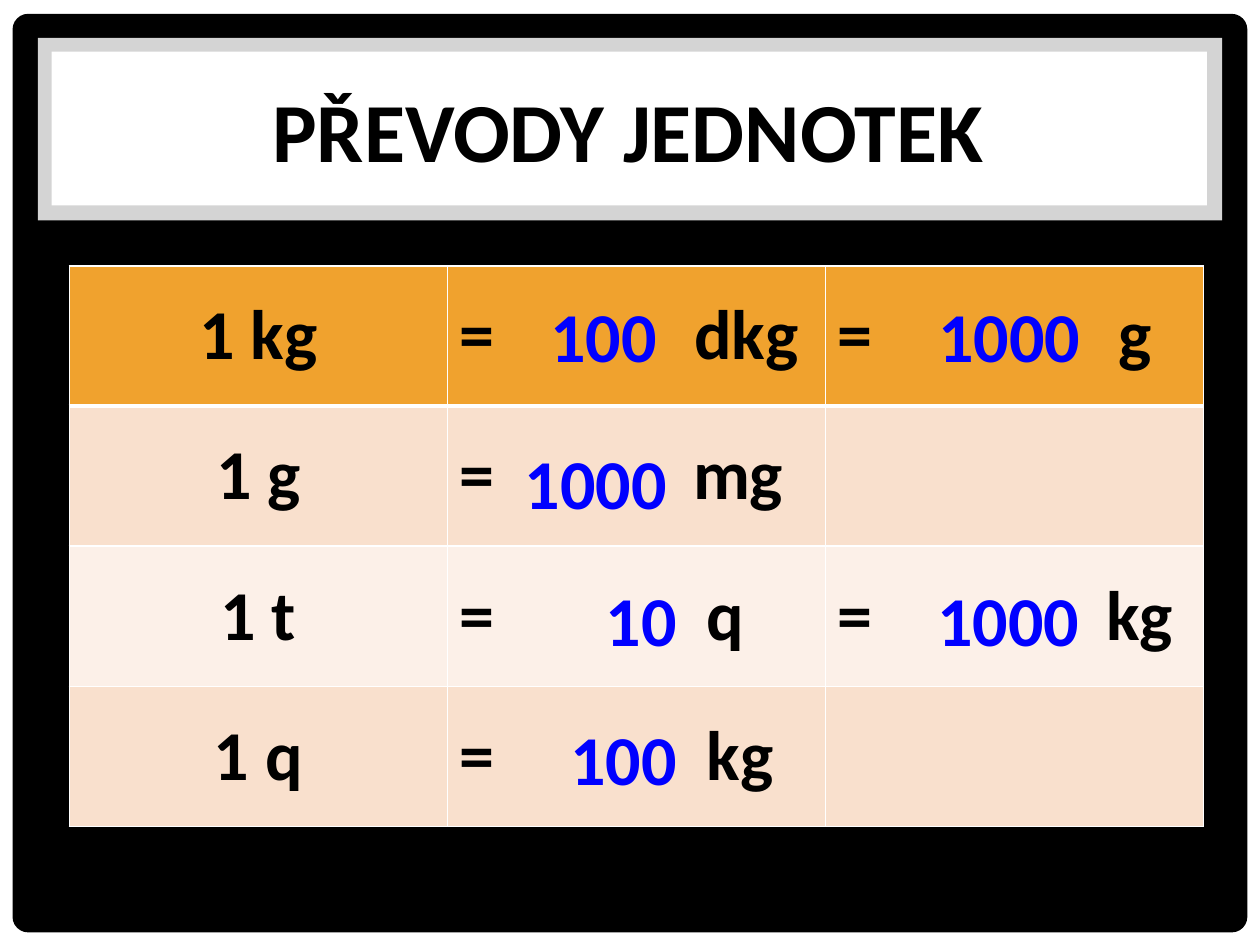
import pptx
import pptx.util
import pptx.dml.color
import pptx.enum.shapes
import pptx.enum.text
import pptx.oxml
import pptx.oxml.ns

Inches = pptx.util.Inches
Pt = pptx.util.Pt
ALIGN = pptx.enum.text.PP_ALIGN
ANCHOR = pptx.enum.text.MSO_ANCHOR
AUTO_SIZE = pptx.enum.text.MSO_AUTO_SIZE
SHAPE = pptx.enum.shapes.MSO_SHAPE
qn = pptx.oxml.ns.qn

BLACK, WHITE, BLUE = "000000", "FFFFFF", "0000FF"
ROW_FILLS = ["F0A22E", "F9E0CD", "FCF0E8", "F9E0CD"]
ROWS = [
    ["1 kg", ("dkg", 1.86), ("g", 2.23)],
    ["1 g", ("mg", 1.85), None],
    ["1 t", ("q", 1.96), ("kg", 2.13)],
    ["1 q", ("kg", 1.96), None],
]
ANSWERS = [
    ("100", 3.98, 2.27, 1.33, ALIGN.RIGHT),
    ("1000", 4.06, 3.44, 1.33, ALIGN.RIGHT),
    ("10", 4.22, 4.53, 1.25, ALIGN.RIGHT),
    ("100", 4.06, 5.63, 1.41, ALIGN.RIGHT),
    ("1000", 6.95, 2.27, 1.72, ALIGN.RIGHT),
    ("1000", 7.34, 4.53, 1.41, ALIGN.LEFT),
]


def color(value):
    return pptx.dml.color.RGBColor.from_string(value)


def set_fill(target, value):
    target.fill.solid()
    target.fill.fore_color.rgb = color(value)


def add_run(p, text, size, value):
    r = p.add_run()
    r.text = text
    r.font.name = "Calibri"
    r.font.size = Pt(size)
    r.font.bold = True
    r.font.color.rgb = color(value)


def add_panel(s, kind, x, y, w, h, value, alpha=None):
    sp = s.shapes.add_shape(kind, Inches(x), Inches(y), Inches(w), Inches(h))
    sp.shadow.inherit = False
    set_fill(sp, value)
    sp.line.fill.background()
    if alpha:
        srgb = sp._element.spPr.find(".//" + qn("a:srgbClr"))
        pptx.oxml.ns.qn("a:alpha")
        srgb.append(pptx.oxml.parse_xml(
            f'<a:alpha {pptx.oxml.ns.nsdecls("a")} val="{alpha * 1000}"/>'))
    return sp


def add_title(s, text):
    sp = s.shapes.title
    s.shapes._spTree.append(sp._element)
    sp.left, sp.top = Inches(0.47), Inches(0.45)
    sp.width, sp.height = Inches(9.03), Inches(1.14)
    tf = sp.text_frame
    tf.auto_size = AUTO_SIZE.NONE
    tf.word_wrap = True
    tf.vertical_anchor = ANCHOR.MIDDLE
    p = tf.paragraphs[0]
    p.alignment = ALIGN.CENTER
    add_run(p, text, 48, BLACK)


def add_tab_stop(p, position):
    p._p.get_or_add_pPr().append(pptx.oxml.parse_xml(
        f'<a:tabLst {pptx.oxml.ns.nsdecls("a")}>'
        f'<a:tab pos="{Inches(position)}" algn="l"/></a:tabLst>'))


def set_borders(cell, top, bottom):
    tcPr = cell._tc.get_or_add_tcPr()
    for side, width in (("L", 1), ("R", 1), ("T", top), ("B", bottom)):
        tcPr.append(pptx.oxml.parse_xml(
            f'<a:ln{side} {pptx.oxml.ns.nsdecls("a")} w="{Pt(width)}">'
            f'<a:solidFill><a:srgbClr val="{WHITE}"/></a:solidFill></a:ln{side}>'))


def fill_cell(cell, content):
    cell.vertical_anchor = ANCHOR.MIDDLE
    p = cell.text_frame.paragraphs[0]
    if isinstance(content, str):
        p.alignment = ALIGN.CENTER
        add_run(p, content, 40, BLACK)
    elif content:
        unit, position = content
        add_tab_stop(p, position)
        add_run(p, "=\t" + unit, 40, BLACK)


def add_units_table(s):
    table = s.shapes.add_table(len(ROWS), 3, Inches(0.55), Inches(2.11),
                               Inches(9), Inches(4.45)).table
    for i, (row, value) in enumerate(zip(ROWS, ROW_FILLS)):
        for j, content in enumerate(row):
            cell = table.cell(i, j)
            set_borders(cell, 3 if i == 1 else 1, 3 if i == 0 else 1)
            set_fill(cell, value)
            fill_cell(cell, content)


def add_answer(s, text, x, y, w, align):
    sp = s.shapes.add_textbox(Inches(x), Inches(y), Inches(w), Inches(0.77))
    tf = sp.text_frame
    tf.word_wrap = True
    tf.auto_size = AUTO_SIZE.SHAPE_TO_FIT_TEXT
    p = tf.paragraphs[0]
    p.alignment = align
    add_run(p, text, 40, BLUE)


def main():
    prs = pptx.Presentation()
    prs.slide_width, prs.slide_height = Inches(10), Inches(7.5)
    s = prs.slides.add_slide(prs.slide_layouts[5])
    set_fill(s.background, BLACK)
    add_panel(s, SHAPE.RECTANGLE, 0, 0, 10, 7.5, WHITE)
    board = add_panel(s, SHAPE.ROUNDED_RECTANGLE, 0.1, 0.11, 9.8, 7.29, BLACK)
    board.adjustments[0] = 0.017
    add_panel(s, SHAPE.RECTANGLE, 0.3, 0.3, 9.4, 1.45, WHITE, alpha=83)
    add_panel(s, SHAPE.RECTANGLE, 0.41, 0.41, 9.17, 1.22, WHITE)
    add_title(s, "PŘEVODY JEDNOTEK")
    add_units_table(s)
    for answer in ANSWERS:
        add_answer(s, *answer)
    prs.save("out.pptx")


if __name__ == "__main__":
    main()
